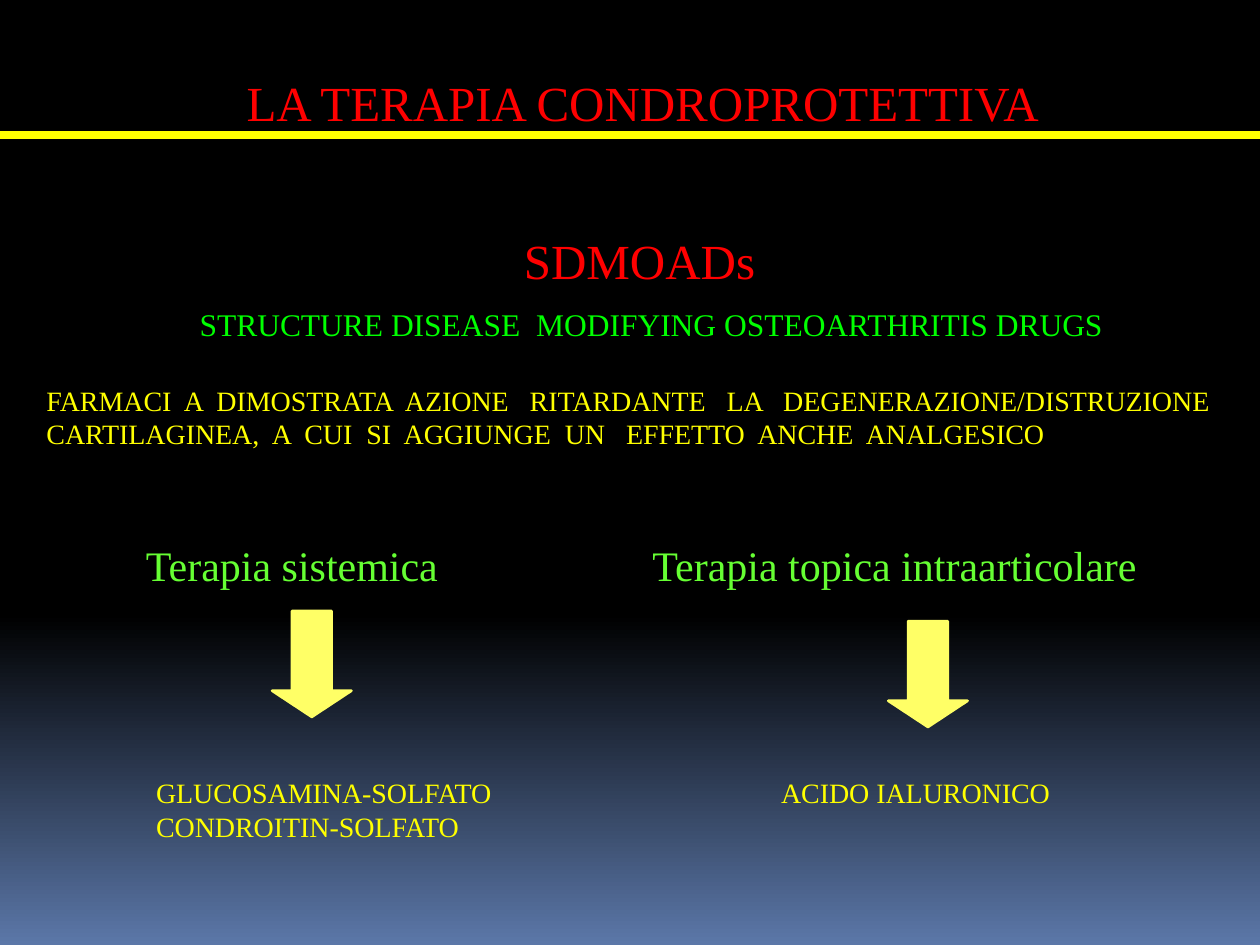
from copy import deepcopy

from lxml import etree
from pptx import Presentation
from pptx.dml.color import RGBColor
from pptx.enum.shapes import MSO_CONNECTOR, MSO_SHAPE
from pptx.enum.text import MSO_ANCHOR, MSO_AUTO_SIZE, PP_ALIGN
from pptx.oxml import parse_xml
from pptx.oxml.ns import nsdecls, qn
from pptx.util import Inches, Pt


def rgb(hex_color):
    return RGBColor.from_string(hex_color)


def write(paragraph, text, size, color, align=PP_ALIGN.LEFT, spacing=1.0, before=0, indent=0):
    paragraph.alignment = align
    paragraph.line_spacing = spacing
    paragraph.space_before = Pt(before)
    paragraph._p.get_or_add_pPr().set("marL", str(Inches(indent)))
    run = paragraph.add_run()
    run.text = text
    run.font.name = "Times New Roman"
    run.font.size = Pt(size)
    run.font.color.rgb = rgb(color)
    return run


prs = Presentation()
prs.slide_width, prs.slide_height = Inches(10), Inches(7.5)
slide = prs.slides.add_slide(prs.slide_layouts[5])
shapes = slide.shapes

# Background: black, fading to blue at the bottom
backdrop = slide.background.fill
backdrop.gradient()
backdrop.gradient_angle = 270
stop_list = slide.element.find(".//" + qn("a:gsLst"))
stop_list.insert(1, deepcopy(stop_list[0]))
for stop, (position, color) in zip(
        backdrop.gradient_stops, [(0, "000000"), (0.65, "000000"), (1, "5B77A8")]):
    stop.position = position
    stop.color.rgb = rgb(color)

# Title with a light text shadow
title = shapes.title
title.left, title.top, title.width, title.height = (
    Inches(0), Inches(0.59), Inches(10), Inches(0.53))
heading = title.text_frame
heading.auto_size = MSO_AUTO_SIZE.NONE
heading.vertical_anchor = MSO_ANCHOR.BOTTOM
heading.margin_top, heading.margin_bottom = Inches(0.05), Inches(0.08)
title_run = write(heading.paragraphs[0], "LA TERAPIA CONDROPROTETTIVA", 28, "FF0000",
                  align=PP_ALIGN.CENTER, spacing=0.8, indent=0.2)
title_run.font.fill._xPr.find(qn("a:solidFill")).addnext(parse_xml(
    f'<a:effectLst {nsdecls("a")}><a:outerShdw dist="17961" dir="2700000">'
    '<a:srgbClr val="FFFFFF"/></a:outerShdw></a:effectLst>'))

# Rule under the title
rule = shapes.add_connector(
    MSO_CONNECTOR.STRAIGHT, Inches(0), Inches(1.07), Inches(10), Inches(1.07))
rule.line.color.rgb = rgb("FFFF00")
rule.line.width = Pt(4.5)
etree.SubElement(rule._element.spPr, qn("a:effectLst"))

# Definition of the drug class
definition = shapes.add_textbox(
    Inches(0.27), Inches(1.78), Inches(9.61), Inches(1.87)).text_frame
definition.word_wrap = True
write(definition.paragraphs[0], "SDMOADs", 28, "FF0000", align=PP_ALIGN.CENTER)
write(definition.add_paragraph(), "STRUCTURE DISEASE  MODIFYING OSTEOARTHRITIS DRUGS",
      18, "00FF00", align=PP_ALIGN.CENTER, before=9, indent=0.19)
write(definition.add_paragraph(),
      "FARMACI  A  DIMOSTRATA  AZIONE   RITARDANTE   LA   DEGENERAZIONE/DISTRUZIONE "
      "CARTILAGINEA,  A  CUI  SI  AGGIUNGE  UN   EFFETTO  ANCHE  ANALGESICO",
      16, "FFFF00", before=23)

# Arrows from each therapy to its drugs
for left, top in [(2.16, 4.85), (7.05, 4.93)]:
    arrow = shapes.add_shape(
        MSO_SHAPE.DOWN_ARROW, Inches(left), Inches(top), Inches(0.63), Inches(0.84))
    arrow.adjustments[0], arrow.adjustments[1] = 0.5, 0.33
    arrow.shadow.inherit = False
    arrow.fill.solid()
    arrow.fill.fore_color.rgb = rgb("FFFF66")
    arrow.line.color.rgb = rgb("FFFF66")
    arrow.line.width = Pt(1.5)

# Therapies and their drugs
therapy_style = dict(size=24, color="66FF33", spacing=1.2)
drug_style = dict(size=16, color="FFFF00")
for left, top, width, height, text, style in [
    (1.06, 4.15, 2.71, 0.58, "Terapia sistemica", therapy_style),
    (5.08, 4.15, 4.45, 0.58, "Terapia topica intraarticolare", therapy_style),
    (1.14, 6.11, 4.17, 0.64, "GLUCOSAMINA-SOLFATO CONDROITIN-SOLFATO", drug_style),
    (6.1, 6.11, 2.62, 0.37, "ACIDO IALURONICO", drug_style),
]:
    label = shapes.add_textbox(
        Inches(left), Inches(top), Inches(width), Inches(height)).text_frame
    label.word_wrap = True
    write(label.paragraphs[0], text, **style)

prs.save("out.pptx")
